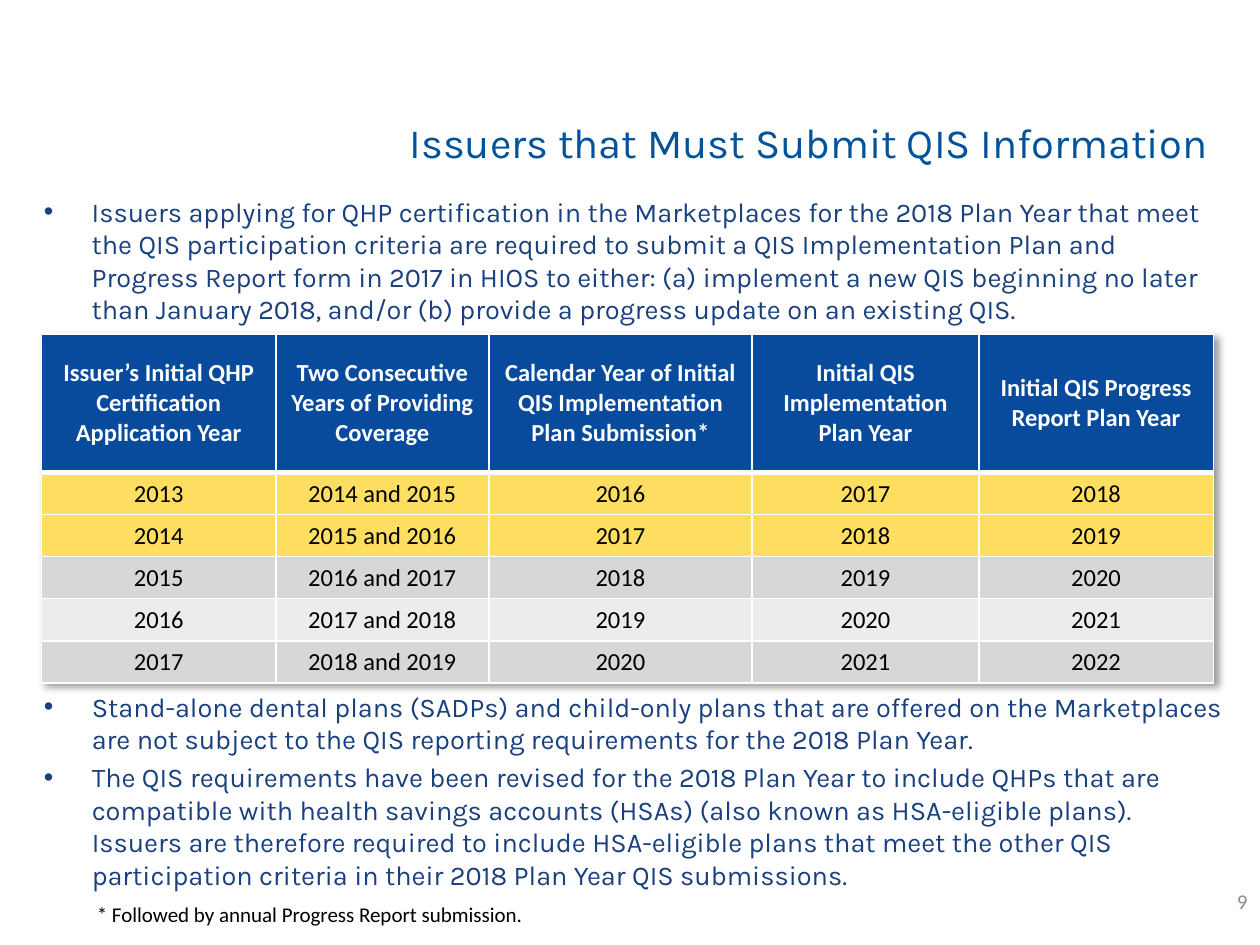
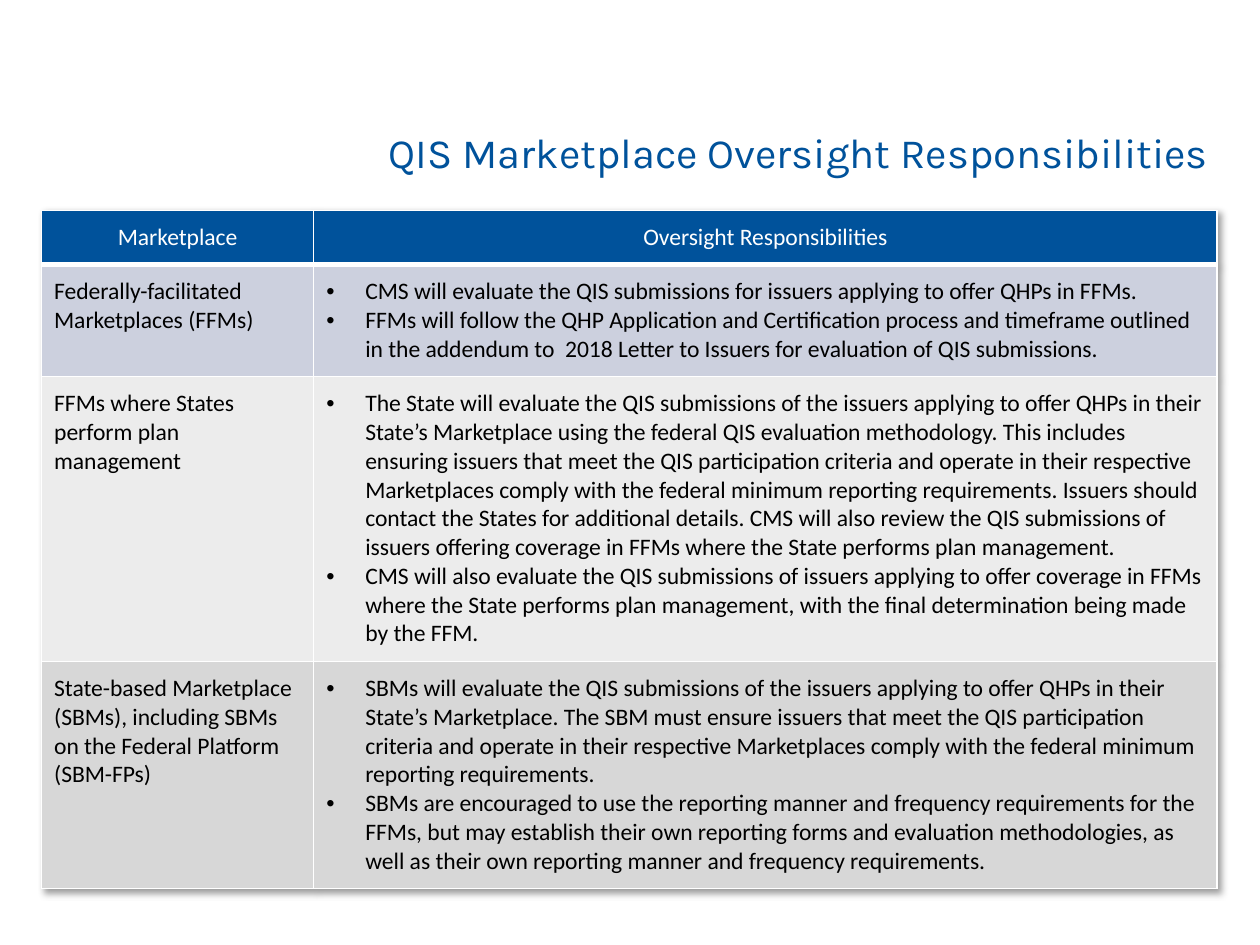
from lxml import etree
from pptx import Presentation
from pptx.dml.color import RGBColor
from pptx.enum.text import MSO_ANCHOR as ANCHOR, PP_ALIGN as ALIGN
from pptx.oxml.ns import qn
from pptx.util import Inches, Pt

COLORS = {
    "title": "00529B", "body": "19407F", "number": "8C8C8C",
    "header": "084A9C", "highlight": "FEDE61", "federal": "CCD0DE",
    "gray": "D7D7D7", "light": "ECECEC", "black": "000000", "white": "FFFFFF",
}
HEADING_FONT, TABLE_FONT = "Karla", "Calibri"


def rgb(name):
    return RGBColor.from_string(COLORS[name])


def add_color(parent, name):
    return etree.SubElement(parent, qn("a:srgbClr"), val=COLORS[name])


class Deck:
    """Holds the presentation, its text style and the current slide."""

    def __init__(self):
        self.prs = Presentation()
        self.prs.slide_width, self.prs.slide_height = Inches(10), Inches(7.5)

    def new_slide(self):
        self.s = self.prs.slides.add_slide(self.prs.slide_layouts[6])

    def set_lines(self, tf, lines, size, color, font, align=ALIGN.LEFT,
                  bold=False, indent=None, gap=0):
        """Fill a text frame; an indent in inches makes the lines bullets."""
        tf.word_wrap = True
        for i, line in enumerate(lines):
            p = tf.paragraphs[0] if i == 0 else tf.add_paragraph()
            p.text, p.alignment = line, align
            if i:
                p.space_before = Pt(gap)
            if indent:
                pPr = p._p.get_or_add_pPr()
                pPr.set("marL", str(Inches(indent)))
                pPr.set("indent", str(-Inches(indent)))
                etree.SubElement(pPr, qn("a:buFont"), typeface="Arial")
                etree.SubElement(pPr, qn("a:buChar"), char="•")
            for r in p.runs:
                r.font.size, r.font.name, r.font.bold = Pt(size), font, bold
                r.font.color.rgb = rgb(color)

    def text(self, box, lines, size, color, font, anchor=ANCHOR.TOP, **style):
        sp = self.s.shapes.add_textbox(*map(Inches, box))
        sp.text_frame.vertical_anchor = anchor
        self.set_lines(sp.text_frame, lines, size, color, font, **style)

    def title(self, left, top, width, words):
        self.text((left, top, width, 0.75), [words], 23.8, "title",
                  HEADING_FONT, ANCHOR.MIDDLE, align=ALIGN.CENTER)

    def bullets(self, box, lines):
        self.text(box, lines, 15.5, "body", HEADING_FONT, indent=0.38, gap=3)

    def table(self, left, top, widths, heights):
        """Add a table with a soft shadow."""
        frame = self.s.shapes.add_table(
            len(heights), len(widths), Inches(left), Inches(top),
            Inches(sum(widths)), Inches(sum(heights)))
        table = frame.table
        table.horz_banding = False
        for column, width in zip(table.columns, widths):
            column.width = Inches(width)
        for row, height in zip(table.rows, heights):
            row.height = Inches(height)
        effects = etree.Element(qn("a:effectLst"))
        shadow = etree.SubElement(
            effects, qn("a:outerShdw"), blurRad=str(Pt(4)), dist=str(Pt(3)),
            dir="2700000", algn="tl", rotWithShape="0")
        etree.SubElement(add_color(shadow, "black"), qn("a:alpha"), val="40000")
        table._tbl.tblPr.insert(0, effects)
        return table

    def cell(self, cell, lines, fill, size, color="black", anchor=ANCHOR.TOP,
             margin=0.05, header=False, **style):
        cell.vertical_anchor = anchor
        cell.margin_top = cell.margin_bottom = Inches(margin)
        self.set_lines(cell.text_frame, lines, size, color, TABLE_FONT, **style)
        tcPr = cell._tc.get_or_add_tcPr()
        for side in ("lnL", "lnR", "lnT", "lnB"):
            width = Pt(3 if header and side == "lnB" else 1)
            border = etree.SubElement(tcPr, qn("a:" + side), w=str(width))
            add_color(etree.SubElement(border, qn("a:solidFill")), "white")
        cell.fill.solid()
        cell.fill.fore_color.rgb = rgb(fill)


def issuers_slide(deck):
    deck.new_slide()
    deck.title(3.08, 0.75, 6.67, "Issuers that Must Submit QIS Information")
    deck.bullets((0.25, 1.5, 9.5, 1.15), [
        "Issuers applying for QHP certification in the Marketplaces for the 2018 "
        "Plan Year that meet the QIS participation criteria are required to submit "
        "a QIS Implementation Plan and Progress Report form in 2017 in HIOS to "
        "either: (a) implement a new QIS beginning no later than January 2018, "
        "and/or (b) provide a progress update on an existing QIS."])
    deck.text((7.67, 6.95, 2.33, 0.4), ["9"], 12, "number", TABLE_FONT,
              ANCHOR.MIDDLE, align=ALIGN.RIGHT)
    deck.bullets((0.25, 5.43, 9.55, 1.43), [
        "Stand-alone dental plans (SADPs) and child-only plans that are offered on "
        "the Marketplaces are not subject to the QIS reporting requirements for "
        "the 2018 Plan Year.",
        "The QIS requirements have been revised for the 2018 Plan Year to include "
        "QHPs that are compatible with health savings accounts (HSAs) (also known "
        "as HSA-eligible plans). Issuers are therefore required to include "
        "HSA-eligible plans that meet the other QIS participation criteria in "
        "their 2018 Plan Year QIS submissions."])
    deck.text((0.67, 7.11, 3.86, 0.3),
              ["* Followed by annual Progress Report submission."],
              12, "black", TABLE_FONT)

    headers = ["Issuer’s Initial QHP Certification Application Year",
               "Two Consecutive Years of Providing Coverage",
               "Calendar Year of Initial QIS Implementation Plan Submission*",
               "Initial QIS Implementation Plan Year",
               "Initial QIS Progress Report Plan Year"]
    row_fills = ["highlight", "highlight", "gray", "light", "gray"]
    table = deck.table(0.33, 2.65, [1.86, 1.69, 2.09, 1.8, 1.86],
                       [1.1] + [0.33] * len(row_fills))
    for col, words in enumerate(headers):
        deck.cell(table.cell(0, col), [words], "header", 14, "white",
                  ANCHOR.MIDDLE, header=True, align=ALIGN.CENTER, bold=True)
    for row, fill in enumerate(row_fills, 1):
        year = 2012 + row
        values = [year, f"{year + 1} and {year + 2}", year + 3, year + 4, year + 5]
        for col, value in enumerate(values):
            deck.cell(table.cell(row, col), [str(value)], fill, 14,
                      align=ALIGN.CENTER)


def oversight_slide(deck):
    deck.new_slide()
    deck.title(2.92, 0.83, 6.83, "QIS Marketplace Oversight Responsibilities")
    marketplaces = [
        ("federal", "Federally-facilitated Marketplaces (FFMs)", [
            "CMS will evaluate the QIS submissions for issuers applying to offer "
            "QHPs in FFMs.",
            "FFMs will follow the QHP Application and Certification process and "
            "timeframe outlined in the addendum to  2018 Letter to Issuers for "
            "evaluation of QIS submissions."]),
        ("light", "FFMs where States perform plan management", [
            "The State will evaluate the QIS submissions of the issuers applying to "
            "offer QHPs in their State’s Marketplace using the federal QIS "
            "evaluation methodology. This includes ensuring issuers that meet the "
            "QIS participation criteria and operate in their respective "
            "Marketplaces comply with the federal minimum reporting requirements. "
            "Issuers should contact the States for additional details. CMS will "
            "also review the QIS submissions of issuers offering coverage in FFMs "
            "where the State performs plan management.",
            "CMS will also evaluate the QIS submissions of issuers applying to "
            "offer coverage in FFMs where the State performs plan management, with "
            "the final determination being made by the FFM."]),
        ("gray", "State-based Marketplace (SBMs), including SBMs on the Federal "
         "Platform (SBM-FPs)", [
             "SBMs will evaluate the QIS submissions of the issuers applying to "
             "offer QHPs in their State’s Marketplace. The SBM must ensure issuers "
             "that meet the QIS participation criteria and operate in their "
             "respective Marketplaces comply with the federal minimum reporting "
             "requirements.",
             "SBMs are encouraged to use the reporting manner and frequency "
             "requirements for the FFMs, but may establish their own reporting "
             "forms and evaluation methodologies, as well as their own reporting "
             "manner and frequency requirements."]),
    ]
    table = deck.table(0.33, 1.67, [2.16, 7.17], [0.43, 0.89, 2.26, 1.8])
    for col, words in enumerate(["Marketplace", "Oversight Responsibilities"]):
        deck.cell(table.cell(0, col), [words], "title", 13.5, "white",
                  ANCHOR.BOTTOM, 0.1, header=True, align=ALIGN.CENTER)
    for row, (fill, name, duties) in enumerate(marketplaces, 1):
        deck.cell(table.cell(row, 0), [name], fill, 13.5, margin=0.1)
        deck.cell(table.cell(row, 1), duties, fill, 13.5, margin=0.1, indent=0.31)


def main():
    deck = Deck()
    issuers_slide(deck)
    oversight_slide(deck)
    deck.prs.save("out.pptx")


if __name__ == "__main__":
    main()
